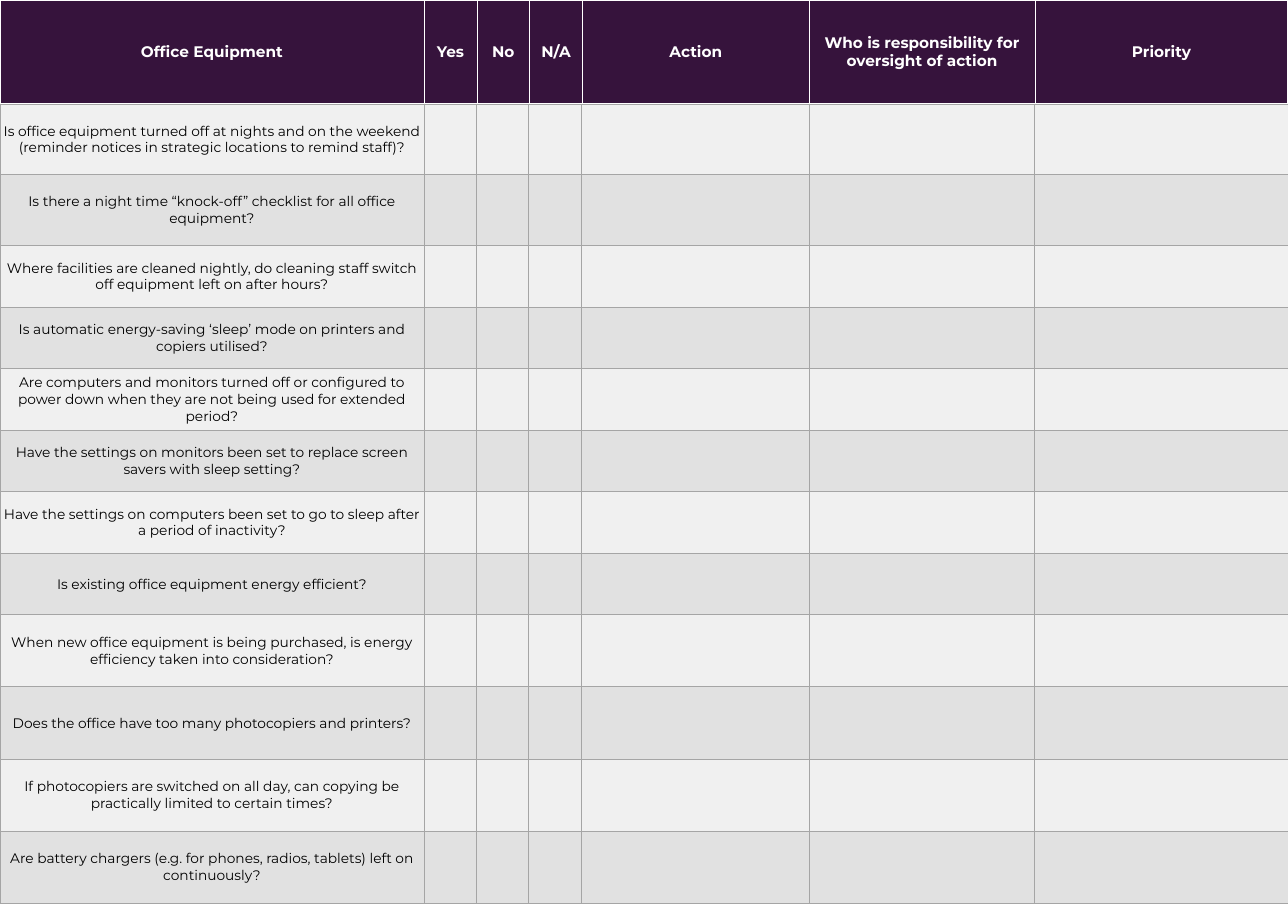
import pptx
import pptx.dml.color
import pptx.enum.text
import pptx.oxml
import pptx.oxml.ns
import pptx.util
from pptx.util import Cm, Pt

RGBColor = pptx.dml.color.RGBColor
PURPLE = RGBColor(0x36, 0x13, 0x3C)
WHITE = RGBColor(0xFF, 0xFF, 0xFF)
BLACK = RGBColor(0x00, 0x00, 0x00)
LIGHT = RGBColor(0xF0, 0xF0, 0xF0)
DARK = RGBColor(0xE1, 0xE1, 0xE1)
GRID = RGBColor(0xA5, 0xA5, 0xA5)

HEADINGS = ["Office Equipment", "Yes", "No", "N/A", "Action",
            "Who is responsibility for oversight of action", "Priority"]
QUESTIONS = [
    "Is office equipment turned off at nights and on the weekend (reminder notices in strategic locations to remind staff)?",
    "Is there a night time “knock-off” checklist for all office equipment?",
    "Where facilities are cleaned nightly, do cleaning staff switch off equipment left on after hours?",
    "Is automatic energy-saving ‘sleep’ mode on printers and copiers utilised?",
    "Are computers and monitors turned off or configured to power down when they are not being used for extended period?",
    "Have the settings on monitors been set to replace screen savers with sleep setting?",
    "Have the settings on computers been set to go to sleep after a period of inactivity?",
    "Is existing office equipment energy efficient?",
    "When new office equipment is being purchased, is energy efficiency taken into consideration?",
    "Does the office have too many photocopiers and printers?",
    "If photocopiers are switched on all day, can copying be practically limited to certain times?",
    "Are battery chargers (e.g. for phones, radios, tablets) left on continuously?",
]
HEADER_COLS = [19.56, 2.46, 2.41, 2.46, 10.44, 10.44, 11.66]
BODY_COLS = [19.56, 2.41, 2.41, 2.46, 10.52, 10.36, 11.73]
HEADER_HEIGHT = 4.8
BODY_ROWS = [3.25, 3.28] + [2.84] * 6 + [3.33] * 4


class ChecklistSlide:
    font_name = "Montserrat"

    def __init__(self, prs):
        self.slide = prs.slides.add_slide(prs.slide_layouts[6])

    def table(self, top, cols, heights, texts, fills, line, bottom=1, margin=None, **font):
        """Add a full-width table; fills alternate by row, bottom is the lower border in points."""
        frame = self.slide.shapes.add_table(len(heights), len(cols), 0, Cm(top),
                                            Cm(sum(cols)), Cm(sum(heights)))
        table = frame.table
        table.first_row = table.horz_banding = False
        for column, width in zip(table.columns, cols):
            column.width = Cm(width)
        for i, (row, height) in enumerate(zip(table.rows, heights)):
            row.height = Cm(height)
            for cell, text in zip(row.cells, texts[i]):
                self.borders(cell, line, bottom)
                cell.fill.solid()
                cell.fill.fore_color.rgb = fills[i % len(fills)]
                if text:
                    self.text(cell, text, margin, **font)

    def borders(self, cell, color, bottom):
        tc_pr = cell._tc.get_or_add_tcPr()
        for side, width in zip("LRTB", (1, 1, 1, bottom)):
            tc_pr.append(pptx.oxml.parse_xml(
                f'<a:ln{side} {pptx.oxml.ns.nsdecls("a")} w="{Pt(width)}">'
                f'<a:solidFill><a:srgbClr val="{color}"/></a:solidFill></a:ln{side}>'))

    def text(self, cell, text, margin, size, color, bold=False):
        cell.text = text
        cell.vertical_anchor = pptx.enum.text.MSO_ANCHOR.MIDDLE
        if margin is not None:
            cell.margin_left = cell.margin_right = cell.margin_top = Cm(margin)
            cell.margin_bottom = 0
        p = cell.text_frame.paragraphs[0]
        p.alignment = pptx.enum.text.PP_ALIGN.CENTER
        p.font.name, p.font.size, p.font.bold = self.font_name, Pt(size), bold
        p.font.color.rgb = color


def main():
    prs = pptx.Presentation()
    prs.slide_width, prs.slide_height = Cm(59.44), Cm(41.91)
    s = ChecklistSlide(prs)
    s.table(0, HEADER_COLS, [HEADER_HEIGHT], [HEADINGS], [PURPLE], WHITE,
            bottom=3, size=20, color=WHITE, bold=True)
    answers = [""] * (len(BODY_COLS) - 1)
    s.table(HEADER_HEIGHT, BODY_COLS, BODY_ROWS, [[q] + answers for q in QUESTIONS],
            [LIGHT, DARK], GRID, margin=0.03, size=18, color=BLACK)
    prs.save("out.pptx")


if __name__ == "__main__":
    main()
